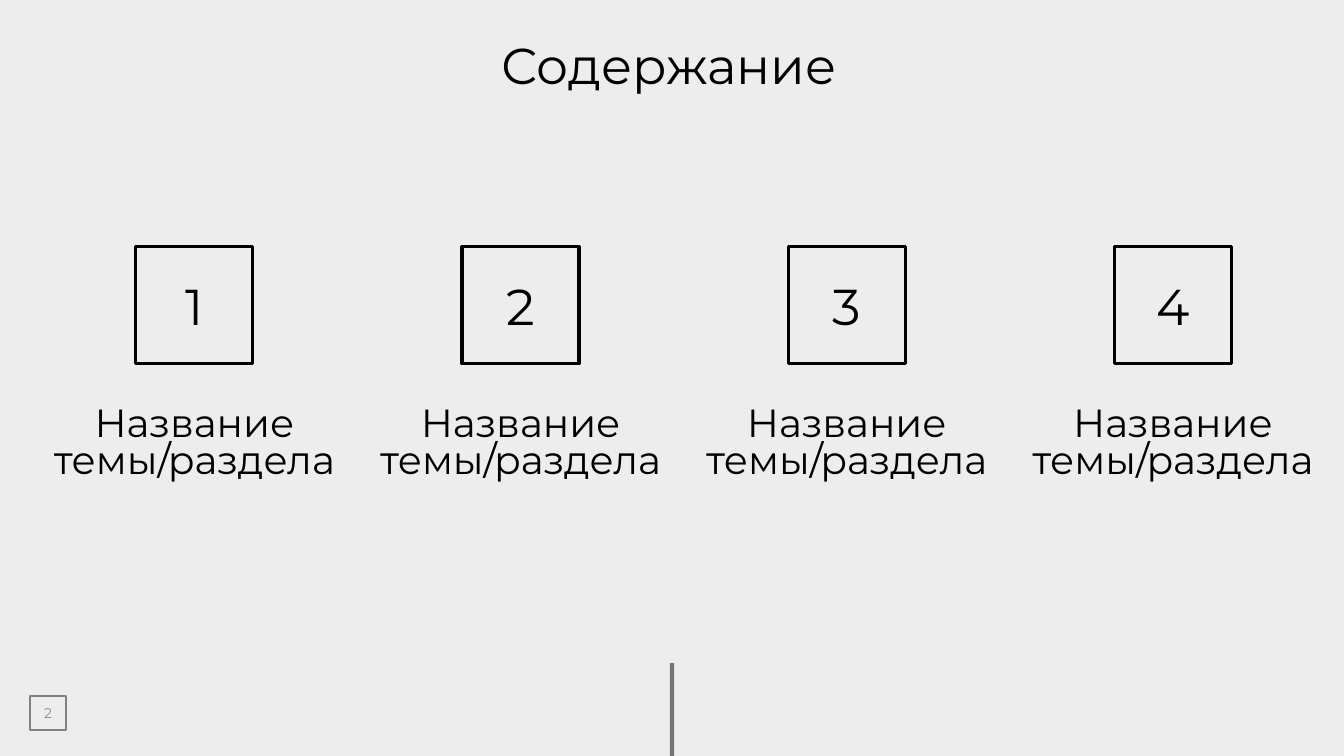
from lxml import etree
from pptx import Presentation
from pptx.dml.color import RGBColor
from pptx.enum.shapes import MSO_CONNECTOR as Connector, MSO_SHAPE as Shape
from pptx.enum.text import MSO_ANCHOR as Anchor, PP_ALIGN as Align
from pptx.oxml.ns import qn
from pptx.util import Cm, Pt

BACKGROUND = RGBColor(0xED, 0xED, 0xED)
BLACK = RGBColor(0x00, 0x00, 0x00)
FRAME_GREY = RGBColor(0x80, 0x80, 0x80)
NUMBER_GREY = RGBColor(0x8C, 0x8C, 0x8C)

FONT = "Montserrat"
WIDTH, HEIGHT = 33.87, 19.05
TOPICS = ["Название темы/раздела"] * 4
TOPIC_PITCH = 8.22

TITLE = {"size": Pt(36), "color": BLACK, "align": Align.LEFT, "spacing": 0.9}
LABEL = {"size": Pt(28), "color": BLACK, "align": Align.CENTER, "spacing": 0.8}
NUMBER = {"size": Pt(36), "color": BLACK, "align": Align.CENTER, "spacing": 1.0}
PAGE = {"size": Pt(10), "color": NUMBER_GREY, "align": Align.CENTER, "spacing": 1.0}


def set_attributes(target, values):
    for name, value in values.items():
        setattr(target, name, value)


def write_text(shape, text, style):
    frame = shape.text_frame
    set_attributes(frame, {"word_wrap": True, "vertical_anchor": Anchor.MIDDLE})
    paragraph = frame.paragraphs[0]
    set_attributes(paragraph, {"alignment": style["align"], "line_spacing": style["spacing"]})
    run = paragraph.add_run()
    run.text = text
    set_attributes(run.font, {"name": FONT, "size": style["size"]})
    run.font.color.rgb = style["color"]


def add_text(slide, box, text, style):
    shape = slide.shapes.add_textbox(*map(Cm, box))
    write_text(shape, text, style)


def add_numbered_frame(slide, box, number, style, line_color, line_width):
    shape = slide.shapes.add_shape(Shape.RECTANGLE, *map(Cm, box))
    shape.shadow.inherit = False
    shape.fill.background()
    shape.line.color.rgb = line_color
    shape.line.width = Pt(line_width)
    write_text(shape, str(number), style)


def add_footer(slide, box):
    left, top, width, height = box
    # Half-transparent centre line
    middle = Cm(left + width / 2)
    connector = slide.shapes.add_connector(
        Connector.STRAIGHT, middle, Cm(top), middle, Cm(top + height))
    connector.line.color.rgb = BLACK
    connector.line.width = Pt(3)
    properties = connector._element.spPr
    color = properties.find(".//" + qn("a:srgbClr"))
    etree.SubElement(color, qn("a:alpha"), val="50000")
    etree.SubElement(properties, qn("a:effectLst"))
    # Page number
    page_box = (left + 0.76, top + 0.84, 0.91, 0.84)
    add_numbered_frame(slide, page_box, 2, PAGE, FRAME_GREY, 1.5)


def add_topic(slide, box, number, label):
    left, top, width, height = box
    side, label_height = 2.95, 2.36
    square = (left + (width - side) / 2, top, side, side)
    add_numbered_frame(slide, square, number, NUMBER, BLACK, 2.25)
    label_box = (left, top + height - label_height, width, label_height)
    add_text(slide, label_box, label, LABEL)


def add_topics(slide, box):
    left, top, width, height = box
    for index, label in enumerate(TOPICS):
        topic_box = (left + index * TOPIC_PITCH, top, width, height)
        add_topic(slide, topic_box, index + 1, label)


def add_contents_slide(presentation):
    slide = presentation.slides.add_slide(presentation.slide_layouts[6])
    fill = slide.background.fill
    fill.solid()
    fill.fore_color.rgb = BACKGROUND
    add_footer(slide, (0, 16.71, WIDTH, HEIGHT - 16.71))
    add_text(slide, (12.4, 0.53, 9.09, 2.36), "Содержание", TITLE)
    # Box of the first topic; the others follow at an equal pitch
    add_topics(slide, (1.09, 6.22, 7.62, 6.17))


def main():
    presentation = Presentation()
    set_attributes(presentation, {"slide_width": Cm(WIDTH), "slide_height": Cm(HEIGHT)})
    add_contents_slide(presentation)
    presentation.save("out.pptx")


if __name__ == "__main__":
    main()
